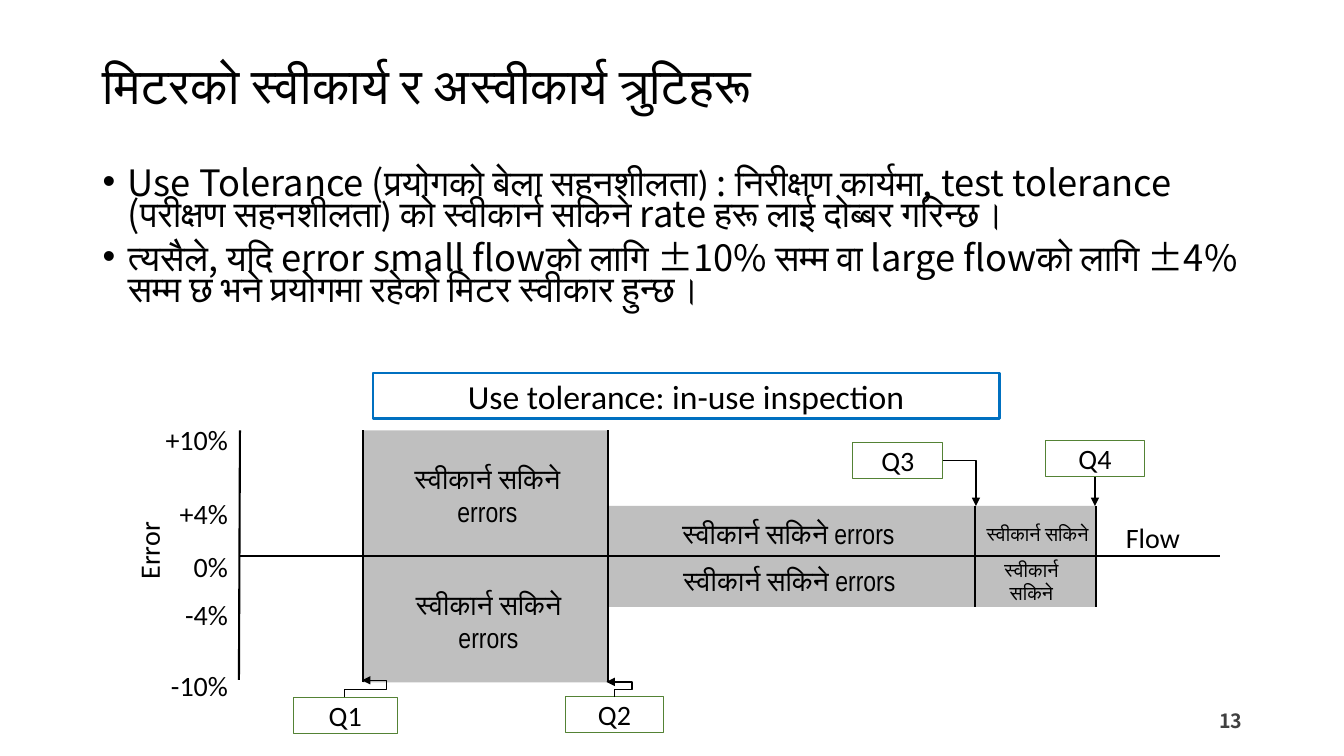
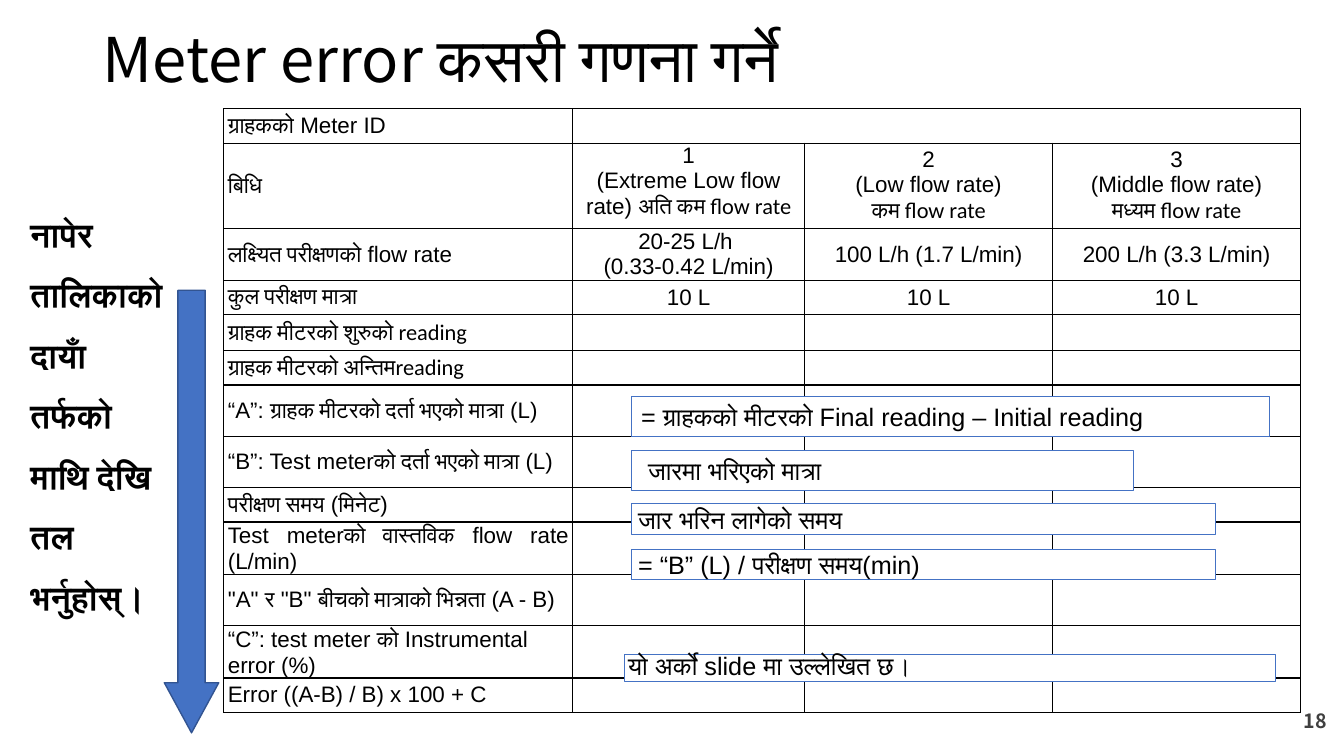
from dataclasses import dataclass
from itertools import cycle

from lxml.etree import SubElement
from pptx import Presentation
from pptx.dml.color import RGBColor
from pptx.enum.shapes import MSO_CONNECTOR as Link, MSO_SHAPE as Shape
from pptx.enum.text import MSO_ANCHOR as Anchor, MSO_AUTO_SIZE as AutoSize, PP_ALIGN as Align
from pptx.oxml.ns import qn
from pptx.util import Pt

PX = 9144  # 100 px to the inch
COLORS = {
    "ink": "000000", "paper": "FFFFFF", "number": "404040", "band": "BFBFBF",
    "flow": "548235", "caption": "0070C0", "accent": "4472C4", "arrow_edge": "325491",
}
CJK, SANS, NARROW, BODY = "Noto Sans CJK JP", "Arial", "Arial Narrow", "Calibri"
ACCEPTED = "स्वीकार्न सकिने"


@dataclass
class Box:
    left: int
    top: int
    width: int
    height: int

    def inside(self, left, top, width, height):
        return Box(self.left + left, self.top + top, width, height)

    def point(self, x, y):
        return round((self.left + x) * PX), round((self.top + y) * PX)

    def emu(self):
        return [round(side * PX) for side in (self.left, self.top, self.width, self.height)]


def color(name):
    return RGBColor.from_string(COLORS[name])


def add_spans(para, marked, size, fonts, bold=False, ink="ink"):
    """Add one run per part of the text between bars, taking the fonts in turn."""
    for part, name in zip(marked.split("|"), cycle(fonts)):
        if not part:
            continue
        span = para.add_run()
        span.text = part
        font = span.font
        font.size, font.name, font.bold = Pt(size), name, bold
        font.color.rgb = color(ink)
        for script in ("a:ea", "a:cs"):
            SubElement(font._element, qn(script)).set("typeface", name)


def write(shape, text, size, fonts, align=Align.LEFT, anchor=Anchor.TOP,
          margins=(10, 5), spacing=None, **style):
    frame = shape.text_frame
    frame.word_wrap, frame.auto_size = True, AutoSize.NONE
    frame.vertical_anchor = anchor
    frame.margin_left = frame.margin_right = margins[0] * PX
    frame.margin_top = frame.margin_bottom = margins[1] * PX
    for index, line in enumerate(text.split("\n")):
        para = frame.add_paragraph() if index else frame.paragraphs[0]
        para.alignment, para.line_spacing = align, spacing
        add_spans(para, line, size, fonts, **style)
    return frame


def add_text(page, box, text, size, fonts, **style):
    label = page.shapes.add_textbox(*box.emu())
    write(label, text, size, fonts, **style)
    return label


def paint(shape, fill=None, line=None, width=0.75):
    shape.shadow.inherit = False
    if fill:
        shape.fill.solid()
        shape.fill.fore_color.rgb = color(fill)
    else:
        shape.fill.background()
    if line:
        shape.line.color.rgb = color(line)
        shape.line.width = Pt(width)
    else:
        shape.line.fill.background()


def add_shape(page, kind, box, **look):
    shape = page.shapes.add_shape(kind, *box.emu())
    paint(shape, **look)
    return shape


def add_line(page, start, end, width, kind=Link.STRAIGHT, arrow=False):
    line = page.shapes.add_connector(kind, *start, *end)
    line.line.color.rgb = color("ink")
    line.line.width = Pt(width)
    if arrow:
        SubElement(line.line._get_or_add_ln(), qn("a:tailEnd")).set("type", "triangle")
    SubElement(line._element.spPr, qn("a:effectLst"))
    return line


def add_elbow(page, box, bends, turn=0, flips=(), adjusts=()):
    """Add a bent arrow; the box is the one before turning."""
    elbow = add_line(page, box.point(0, 0), box.point(box.width, box.height), 1,
                     Link.ELBOW, arrow=True)
    frame = elbow._element.spPr.find(qn("a:xfrm"))
    frame.set("rot", str(turn * 60000))
    for flip in flips:
        frame.set(flip, "1")
    geometry = elbow._element.spPr.find(qn("a:prstGeom"))
    geometry.set("prst", f"bentConnector{bends + 1}")
    guides = geometry.find(qn("a:avLst"))
    for index, value in enumerate(adjusts, 1):
        guide = SubElement(guides, qn("a:gd"))
        guide.set("name", f"adj{index}")
        guide.set("fmla", f"val {value}")


def add_page(deck, title, title_box, title_size, number, number_box):
    page = deck.slides.add_slide(deck.slide_layouts[5])
    heading = page.shapes.title
    heading.left, heading.top, heading.width, heading.height = title_box.emu()
    write(heading, title, title_size, [CJK], anchor=Anchor.MIDDLE, spacing=0.9)
    add_text(page, number_box, number, 14, [CJK], align=Align.RIGHT,
             anchor=Anchor.MIDDLE, bold=True, ink="number")
    return page


def add_bullets(page, box, text):
    frame = add_text(page, box, text, 25.9, [CJK, BODY], spacing=0.7).text_frame
    for para in frame.paragraphs:
        para.space_before = Pt(10)
        props = para._p.get_or_add_pPr()
        props.set("marL", str(25 * PX))
        props.set("indent", str(-25 * PX))
        SubElement(props, qn("a:buFont")).set("typeface", SANS)
        SubElement(props, qn("a:buChar")).set("char", "•")


def add_tolerance_chart(page, box):
    zero = 182
    q1, q2, q3, q4 = 240, 483, 847, 967

    def level(percent):
        return zero - 12.5 * percent

    middle = {"align": Align.CENTER, "anchor": Anchor.MIDDLE}

    corners = [(q1, 10), (q2, 10), (q2, 4), (q4, 4), (q4, -4), (q2, -4), (q2, -10), (q1, -10)]
    outline = [box.point(x, level(percent)) for x, percent in corners]
    builder = page.shapes.build_freeform(*outline[0])
    builder.add_line_segments(outline[1:], close=True)
    paint(builder.convert_to_shape(), fill="band")

    add_line(page, box.point(118, level(10)), box.point(117, level(-9.8)), 1.5)
    add_line(page, box.point(118, zero), box.point(1090, zero), 1.5)
    for flow, limit in ((q1, 10), (q2, 10), (q3, 4), (q4, 4)):
        add_line(page, box.point(flow, level(limit)), box.point(flow, level(-limit)), 2)

    for tick, top in (("+10%", 44), ("+4%", 118), ("0%", 170), ("-4%", 218), ("-10%", 288)):
        add_text(page, box.inside(28, top, 88, 34), tick, 20, [BODY], align=Align.RIGHT)
    error = add_text(page, box.inside(3, 110, 49, 133), "Error", 20, [BODY], **middle)
    error.text_frame._txBody.bodyPr.set("vert", "vert270")
    add_text(page, box.inside(964, 136, 125, 54), "Flow ", 20, [BODY], **middle)

    for area, text, size in (
        ((273, 86, 181, 70), ACCEPTED + " errors", 20),
        ((274, 211, 181, 70), ACCEPTED + " errors", 20),
        ((536, 139, 252, 41), ACCEPTED + " errors", 20),
        ((538, 183, 250, 45), ACCEPTED + " errors", 20),
        ((830, 124, 158, 70), ACCEPTED, 14),
        ((845, 183, 116, 47), ACCEPTED, 14),
    ):
        add_text(page, box.inside(*area), text, size, [NARROW], **middle)

    flows = {}
    for name, area in (("Q1", (171, 322, 103, 36)), ("Q2", (441, 321, 97, 36)),
                       ("Q3", (726, 69, 89, 36)), ("Q4", (917, 67, 98, 36))):
        flows[name] = add_shape(page, Shape.RECTANGLE, box.inside(*area), line="flow")
        write(flows[name], name, 20, [BODY], margins=(4, 4), **middle)
    drop = add_line(page, box.point(966, 103), box.point(966, level(4)), 1, arrow=True)
    drop.begin_connect(flows["Q4"], 2)
    add_elbow(page, box.inside(815, 87, 33, 45), 1)
    add_elbow(page, box.inside(222, 305, 17, 17), 3, 90, ("flipH", "flipV"), (48000, 242200))
    add_elbow(page, box.inside(478, 310, 15, 8), 3, 270, ("flipV",), (50000, -216800))

    caption = add_shape(page, Shape.RECTANGLE, box.inside(250, 0, 621, 45),
                        line="caption", width=2)
    write(caption, "Use tolerance: in-use inspection", 24, [BODY], margins=(4, 0), **middle)


# Bars switch between the Latin font and the Devanagari one.
ERROR_ROWS = [
    (34, ["|ग्राहकको| Meter ID"]),
    (85, ["|बिधि", "1\n(Extreme Low flow rate) |अति कम flow rate",
          "2\n(Low flow rate)\n|कम flow rate", "3\n(Middle flow rate)\n|मध्यम flow rate"]),
    (51, ["|लक्ष्यित परीक्षणको| flow rate", "20-25 L/h \n(0.33-0.42 L/min)",
          "100 L/h (1.7 L/min)", "200 L/h (3.3 L/min)"]),
    (34, ["|कुल परीक्षण मात्रा"] + ["10 L"] * 3),
    (36, ["|ग्राहक मीटरको शुरुको reading"]),
    (34, ["|ग्राहक मीटरको अन्तिमreading"]),
    (51, ["“A”: |ग्राहक मीटरको दर्ता भएको मात्रा| (L)"]),
    (51, ["“B”: Test meter|को दर्ता भएको मात्रा| (L)"]),
    (34, ["|परीक्षण समय| (|मिनेट|)"]),
    (51, ["Test meter|को वास्तविक| flow rate (L/min)"]),
    (51, ["\"A\" |र| \"B\" |बीचको मात्राको भिन्नता| (A - B)"]),
    (51, ["“C”: test meter |को| Instrumental error (%)"]),
    (34, ["Error ((A-B) / B) x 100 + C"]),
]


def format_cell(cell):
    cell.margin_left = cell.margin_right = 4 * PX
    cell.margin_top = cell.margin_bottom = 0
    cell.vertical_anchor = Anchor.MIDDLE
    props = cell._tc.get_or_add_tcPr()
    for side in ("a:lnL", "a:lnR", "a:lnT", "a:lnB"):
        border = SubElement(props, qn(side))
        border.set("w", str(Pt(1)))
        fill = SubElement(border, qn("a:solidFill"))
        SubElement(fill, qn("a:srgbClr")).set("val", COLORS["ink"])
    cell.fill.background()


def add_error_table(page, box):
    widths = [346, 230, 246, 246]
    table = page.shapes.add_table(len(ERROR_ROWS), len(widths), *box.emu()).table
    table.first_row = table.horz_banding = False
    for column, width in zip(table.columns, widths):
        column.width = width * PX
    for row, (height, texts) in zip(table.rows, ERROR_ROWS):
        row.height = height * PX
        for cell in row.cells:
            format_cell(cell)
        for index, text in enumerate(texts):
            cell = row.cells[index]
            for number, line in enumerate(text.split("\n")):
                para = cell.text_frame.add_paragraph() if number else cell.text_frame.paragraphs[0]
                para.alignment = Align.CENTER if index else Align.JUSTIFY
                add_spans(para, line, 16, [SANS, BODY])
    table.cell(0, 1).merge(table.cell(0, 3))
    table.cell(1, 1).vertical_anchor = Anchor.TOP
    table.cell(11, 0).text_frame.paragraphs[0].alignment = Align.LEFT


def add_answers(page, box):
    for area, text, margins, spacing in (
        ((404, 285, 633, 40), "= ग्राहकको मीटरको Final reading – Initial reading", (10, 5), None),
        ((404, 339, 498, 40), " जारमा भरिएको मात्रा", (10, 5), None),
        ((404, 392, 580, 30), " जार भरिन लागेको समय", (0, 0), None),
        ((404, 437, 580, 30), " = “B” (L) / परीक्षण समय(min)", (0, 0), None),
        ((397, 541, 646, 27), "यो अर्को slide मा उल्लेखित छ।", (4, 0), Pt(19)),
    ):
        answer = add_shape(page, Shape.RECTANGLE, box.inside(*area), fill="paper", line="accent")
        write(answer, text, 18, [SANS], margins=margins, spacing=spacing)


def add_reading_order(page, box):
    add_text(page, box.inside(0, 0, 149, 427),
             "नापेर तालिकाको दायाँ तर्फको माथि देखि तल भर्नुहोस्।",
             24, [NARROW], margins=(4, 4), spacing=1.5, bold=True)
    arrow = add_shape(page, Shape.DOWN_ARROW, box.inside(137, 100, 54, 439),
                      fill="accent", line="arrow_edge", width=1)
    arrow.adjustments[0], arrow.adjustments[1] = 0.5, 0.92


def main():
    deck = Presentation()
    deck.slide_width, deck.slide_height = 1333 * PX, 750 * PX

    page = add_page(deck, "मिटरको स्वीकार्य र अस्वीकार्य त्रुटिहरू", Box(92, 40, 1150, 95), 36,
                    "13", Box(942, 695, 300, 40))
    add_bullets(page, Box(92, 166, 1150, 194),
                "Use Tolerance (प्रयोगको बेला |सहनशीलता) |: निरीक्षण कार्यमा, test tolerance ("
                "|परीक्षण सहनशीलता) |को स्वीकार्न सकिने rate हरू लाई दोब्बर गरिन्छ।\n"
                "त्यसैले, यदि error small flowको लागि ±10% सम्म वा large flowको लागि ±4% "
                "सम्म छ भने प्रयोगमा रहेको मिटर स्वीकार हुन्छ।")
    add_tolerance_chart(page, Box(120, 370, 1090, 360))

    page = add_page(deck, "Meter error कसरी गणना गर्ने", Box(92, 18, 1150, 89), 44,
                    "18", Box(1026, 695, 300, 40))
    table_box = Box(222, 108, 1069, 597)
    add_error_table(page, table_box)
    add_answers(page, table_box)
    add_reading_order(page, Box(26, 188, 191, 539))

    deck.save("out.pptx")


if __name__ == "__main__":
    main()
